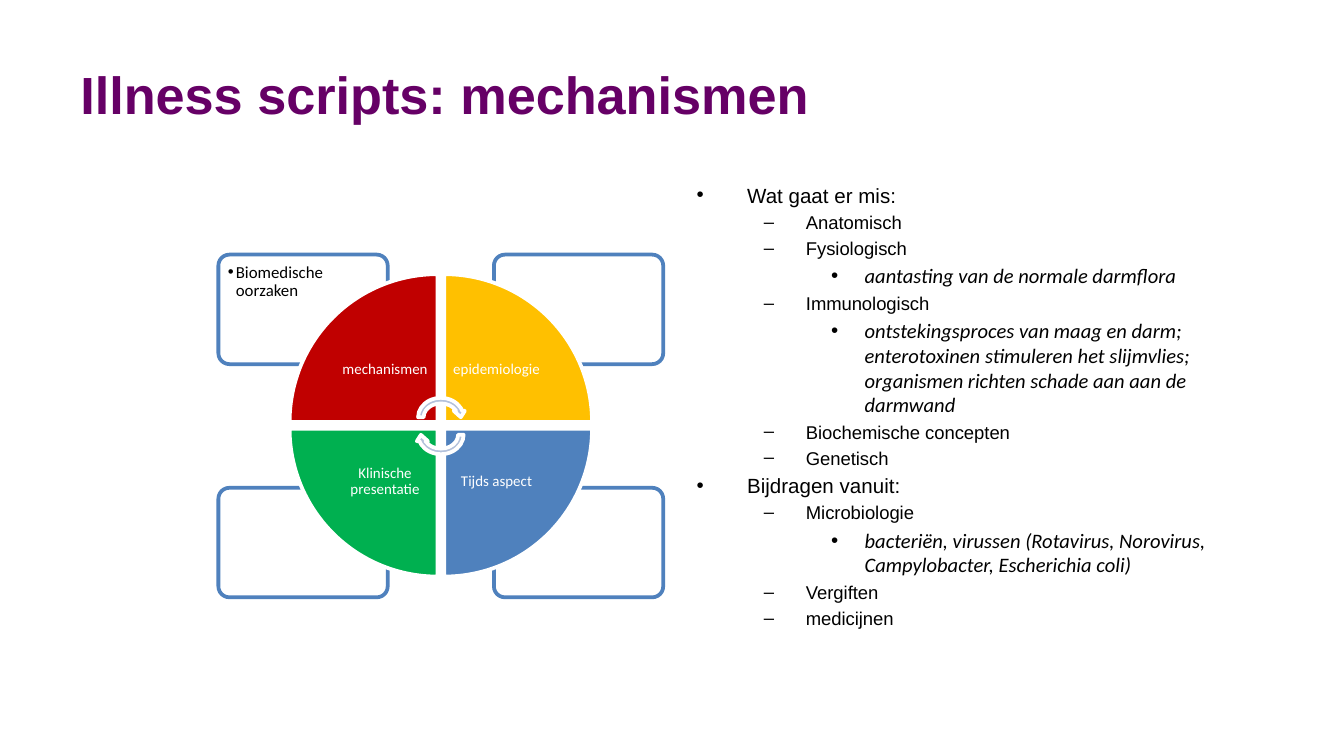
from lxml.etree import SubElement
from pptx import Presentation
from pptx.dml.color import RGBColor
from pptx.enum.shapes import MSO_SHAPE
from pptx.enum.text import MSO_ANCHOR, PP_ALIGN
from pptx.oxml.ns import qn
from pptx.util import Inches, Pt

COLS, ROWS = 100, 56.25
CELL = Inches(0.1)

TITLE = (5, 2.3, 90, 9.4)
WHEEL = (16.25, 18.95, 33.1, 25.5)
BODY = (50.85, 13.1, 44.2, 31.7)

# column, row, turn, fill, label
PARTS = [
    (0, 0, 0, "C00000", "mechanismen"),
    (1, 0, 90, "FFC000", "epidemiologie"),
    (1, 1, 180, "4F81BD", "Tijds aspect"),
    (0, 1, 270, "00B050", "Klinische presentatie"),
]

# bullet, left, hang, space before, font
LEVELS = [
    ("•", 3.75, 3.75, 2.2, {"name": "Arial", "size": Pt(11)}),
    ("–", 8.13, 3.13, 2, {"name": "Arial", "size": Pt(9.9)}),
    ("•", 12.5, 2.5, 2.3, {"name": "Calibri", "size": Pt(11), "italic": True}),
]

POINTS = [
    (0, "Wat gaat er mis:"),
    (1, "Anatomisch"),
    (1, "Fysiologisch"),
    (2, "aantasting van de normale darmflora"),
    (1, "Immunologisch"),
    (2, "ontstekingsproces van maag en darm; enterotoxinen stimuleren het "
        "slijmvlies; organismen richten schade aan aan de darmwand"),
    (1, "Biochemische concepten"),
    (1, "Genetisch"),
    (0, "Bijdragen vanuit:"),
    (1, "Microbiologie"),
    (2, "bacteriën, virussen (Rotavirus, Norovirus, Campylobacter, "
        "Escherichia coli)"),
    (1, "Vergiften"),
    (1, "medicijnen"),
]


def color(code):
    return RGBColor.from_string(code)


def apply(item, form):
    for name, value in form.items():
        setattr(item, name, value)


def grid(*cells):
    """Turn counts of grid cells into lengths."""
    return [round(n * CELL) for n in cells]


def inside(box, x, y, w, h):
    """Place a part relative to the corner of a box."""
    return box[0] + x, box[1] + y, w, h


def draw(slide, kind, box, fill, line, turn=0):
    shape = slide.shapes.add_shape(kind, *grid(*box))
    shape.shadow.inherit = False
    shape.rotation = turn
    shape.fill.solid()
    shape.fill.fore_color.rgb = color(fill)
    shape.line.color.rgb = color(line)
    shape.line.width = Pt(2)
    return shape


def frame(slide, box, **form):
    text = slide.shapes.add_textbox(*grid(*box)).text_frame
    apply(text, {"word_wrap": True, **form})
    return text


def pad(inches):
    sides = ("left", "top", "right", "bottom")
    return {f"margin_{side}": Inches(inches) for side in sides}


def write(para, words, ink, font, **form):
    apply(para, form)
    run = para.add_run()
    run.text = words
    apply(run.font, font)
    run.font.color.rgb = color(ink)


def bullet(para, mark, left, hang):
    props = para._p.get_or_add_pPr()
    left, hang = grid(left, hang)
    props.set("marL", str(left))
    props.set("indent", str(-hang))
    SubElement(props, qn("a:buFont")).set("typeface", "Arial")
    SubElement(props, qn("a:buChar")).set("char", mark)


def heading(slide, box):
    text = frame(slide, box, vertical_anchor=MSO_ANCHOR.MIDDLE)
    font = {"name": "Arial", "size": Pt(28), "bold": True}
    write(text.paragraphs[0], "Illness scripts: mechanismen", "660066", font)


def card(slide, box):
    shape = draw(slide, MSO_SHAPE.ROUNDED_RECTANGLE, box, "FFFFFF", "4F81BD")
    shape.adjustments[0] = 0.1
    tint = shape.fill._xPr.find(".//" + qn("a:srgbClr"))
    SubElement(tint, qn("a:alpha")).set("val", "90000")


def wedge(slide, box, col, row, turn, fill, label):
    spot = inside(box, 5.3 + 11.5 * col, 1.45 + 11.5 * row, 11, 11)
    draw(slide, MSO_SHAPE.PIE_WEDGE, spot, fill, "FFFFFF", turn)
    spot = inside(box, 8.5 + 8.3 * col, 4.65 + 8.35 * row, 7.8, 7.8)
    text = frame(slide, spot, vertical_anchor=MSO_ANCHOR.MIDDLE, **pad(0.06))
    write(text.paragraphs[0], label, "FFFFFF",
          {"name": "Calibri", "size": Pt(8)},
          alignment=PP_ALIGN.CENTER, line_spacing=0.9)


def wheel(slide, box):
    """Four cards behind a quartered disc with two turning arrows."""
    for col, row, *_ in PARTS:
        card(slide, inside(box, 20.5 * col, 17.35 * row, 12.6, 8.15))
    text = frame(slide, inside(box, 0.2, 0.2, 8.5, 5.8), **pad(0.05))
    para = text.paragraphs[0]
    write(para, "Biomedische oorzaken", "000000",
          {"name": "Calibri", "size": Pt(9)}, line_spacing=0.9)
    bullet(para, "•", 0.6, 0.6)
    for part in PARTS:
        wedge(slide, box, *part)
    for row in range(2):
        spot = inside(box, 14.65, 10.45 + 1.3 * row, 3.8, 3.3)
        draw(slide, MSO_SHAPE.CIRCULAR_ARROW, spot, "B3C1DB", "FFFFFF",
             180 * row)


def outline(slide, box):
    text = frame(slide, box)
    for num, (level, words) in enumerate(POINTS):
        mark, left, hang, gap, font = LEVELS[level]
        para = text.add_paragraph() if num else text.paragraphs[0]
        write(para, words, "000000", font, level=level,
              space_before=Pt(gap if num else 0))
        bullet(para, mark, left, hang)


def main():
    deck = Presentation()
    deck.slide_width, deck.slide_height = grid(COLS, ROWS)
    slide = deck.slides.add_slide(deck.slide_layouts[6])
    heading(slide, TITLE)
    wheel(slide, WHEEL)
    outline(slide, BODY)
    deck.save("out.pptx")


if __name__ == "__main__":
    main()
